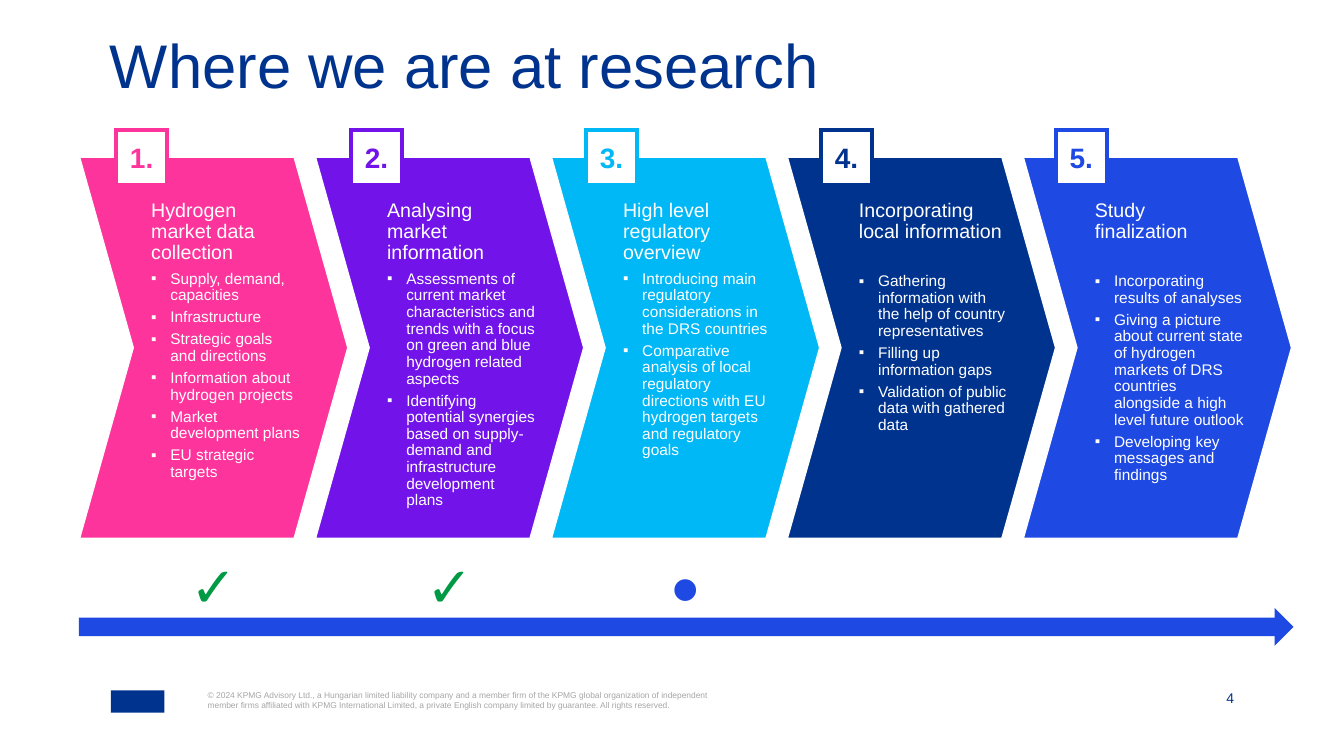
import pptx
import pptx.dml.color
import pptx.enum.shapes
import pptx.enum.text
import pptx.oxml.ns
import pptx.util
from dataclasses import dataclass
from lxml import etree

SHAPE = pptx.enum.shapes.MSO_SHAPE
ALIGN = pptx.enum.text.PP_ALIGN
ANCHOR = pptx.enum.text.MSO_ANCHOR
inches = pptx.util.Inches
qn = pptx.oxml.ns.qn


@dataclass(frozen=True)
class Theme:
    font: str = "Arial"
    navy: str = "00338D"
    blue: str = "1E49E2"
    pink: str = "FD349C"
    purple: str = "7213EA"
    cyan: str = "00B8F5"
    green: str = "009A44"
    gray: str = "A6A6A6"
    white: str = "FFFFFF"
    title: int = 44
    heading: int = 14
    bullet: int = 11
    badge: int = 20
    check: int = 40
    dot: int = 54
    page: int = 10
    legal: int = 6


THEME = Theme()
STEP_LEFT, STEP_PITCH = 0.79, 2.34
BADGE_LEFT, BADGE_PITCH = 1.15, 2.33

# Per step: colour, heading, bullets, status mark
STEPS = [
    (THEME.pink, "Hydrogen market data collection", [
        "Supply, demand, capacities",
        "Infrastructure",
        "Strategic goals and directions",
        "Information about hydrogen projects",
        "Market development plans",
        "EU strategic targets"], "✓"),
    (THEME.purple, "Analysing market information", [
        "Assessments of current market characteristics and trends with a focus "
        "on green and blue hydrogen related aspects",
        "Identifying potential synergies based on supply-demand and "
        "infrastructure development\vplans"], "✓"),
    (THEME.cyan, "High level regulatory overview", [
        "Introducing main regulatory considerations in the DRS countries",
        "Comparative analysis of local regulatory directions with EU hydrogen "
        "targets and regulatory goals"], "•"),
    (THEME.navy, "Incorporating local information\v", [
        "Gathering information with the help of country representatives",
        "Filling up information gaps",
        "Validation of public data with gathered data"], None),
    (THEME.blue, "Study\vfinalization\v", [
        "Incorporating results of analyses",
        "Giving a picture about current state of hydrogen markets of DRS "
        "countries alongside a high level future outlook",
        "Developing key messages and findings"], None),
]
MARKS = {"✓": (THEME.check, THEME.green), "•": (THEME.dot, THEME.blue)}
LEGAL = ("© 2024 KPMG Advisory Ltd., a Hungarian limited liability company and a member "
         "firm of the KPMG global organization of independent member firms affiliated with "
         "KPMG International Limited, a private English company limited by guarantee. "
         "All rights reserved.")


def rgb(value):
    return pptx.dml.color.RGBColor.from_string(value)


def paint(shape, fill, line=None, width=1):
    shape.shadow.inherit = False
    shape.fill.solid()
    shape.fill.fore_color.rgb = rgb(fill)
    if line:
        shape.line.color.rgb = rgb(line)
        shape.line.width = pptx.util.Pt(width)
        # Sharp corners
        etree.SubElement(shape.line._get_or_add_ln(), qn("a:miter"), lim="800000")
    else:
        shape.line.fill.background()


def set_frame(shape, insets=(0, 0, 0, 0), anchor=ANCHOR.TOP):
    frame = shape.text_frame
    values = dict(zip(("margin_left", "margin_top", "margin_right", "margin_bottom"),
                      map(inches, insets)))
    values.update(word_wrap=True, vertical_anchor=anchor,
                  auto_size=pptx.enum.text.MSO_AUTO_SIZE.NONE)
    for name, value in values.items():
        setattr(frame, name, value)
    return frame


def write(paragraph, text, size, color, bold=False, **layout):
    paragraph.text = text
    layout.setdefault("alignment", ALIGN.LEFT)
    for name, value in layout.items():
        setattr(paragraph, name, value)
    for run in paragraph.runs:
        values = dict(name=THEME.font, size=pptx.util.Pt(size), bold=bold)
        for name, value in values.items():
            setattr(run.font, name, value)
        run.font.color.rgb = rgb(color)
    # Line breaks keep the type size of their paragraph
    for line_break in paragraph._p.findall(qn("a:br")):
        etree.SubElement(line_break, qn("a:rPr"), sz=str(size * 100))


def add_bullet(paragraph):
    properties = paragraph._p.get_or_add_pPr()
    properties.set("marL", str(inches(0.19)))
    properties.set("indent", str(inches(-0.19)))
    etree.SubElement(properties, qn("a:buFont"), typeface=THEME.font)
    etree.SubElement(properties, qn("a:buChar"), char="▪")


def add_label(slide, box, text, size, color, insets=(0, 0, 0, 0), anchor=ANCHOR.TOP, **style):
    shape = slide.shapes.add_textbox(*map(inches, box))
    write(set_frame(shape, insets, anchor).paragraphs[0], text, size, color, **style)


def add_title(slide, box, text):
    title = slide.shapes.title
    title.left, title.top, title.width, title.height = map(inches, box)
    write(set_frame(title).paragraphs[0], text, THEME.title, THEME.navy, line_spacing=0.7)


def add_step(slide, box, color, heading, bullets):
    left, top, width, height = box
    # Notched arrow outline, in shares of the box
    outline = [(inches(left + width * x), inches(top + height * y)) for x, y in
               ((0, 0), (0.8, 0), (1, 0.5), (0.8, 1), (0, 1), (0.2, 0.5))]
    builder = slide.shapes.build_freeform(*outline[0])
    builder.add_line_segments(outline[1:], close=True)
    shape = builder.convert_to_shape()
    paint(shape, color, THEME.white)
    # Heading and list
    frame = set_frame(shape, (0.71, 0.43, 0.47, 0.04))
    write(frame.paragraphs[0], heading, THEME.heading, THEME.white,
          line_spacing=0.9, space_after=pptx.util.Pt(0.35 * THEME.heading))
    for bullet in bullets:
        paragraph = frame.add_paragraph()
        write(paragraph, bullet, THEME.bullet, THEME.white,
              line_spacing=0.9, space_after=pptx.util.Pt(0.35 * THEME.bullet))
        add_bullet(paragraph)


def add_badge(slide, box, number, color):
    badge = slide.shapes.add_shape(SHAPE.RECTANGLE, *map(inches, box))
    paint(badge, THEME.white, color, 3)
    frame = set_frame(badge, [0.06] * 4, ANCHOR.MIDDLE)
    write(frame.paragraphs[0], f"{number}.", THEME.badge, color, True, alignment=ALIGN.CENTER)


def add_timeline(slide, box):
    left, top, width, height = box
    # Status marks above the arrow
    for index, (*_, mark) in enumerate(STEPS):
        if mark:
            size, color = MARKS[mark]
            mark_box = (left + 0.92 + index * STEP_PITCH, top, 0.83, 0.83)
            add_label(slide, mark_box, mark, size, color, [0.06] * 4, ANCHOR.MIDDLE,
                      bold=True, alignment=ALIGN.CENTER)
    arrow_height = 0.34
    arrow = slide.shapes.add_shape(SHAPE.RIGHT_ARROW, *map(
        inches, (left, top + height - arrow_height, width, arrow_height)))
    paint(arrow, THEME.blue, THEME.blue)


def add_footer(slide, box):
    left, top, width, height = box
    emblem = slide.shapes.add_shape(SHAPE.RECTANGLE, *map(inches, (left, top, 0.53, height)))
    paint(emblem, THEME.navy)
    add_label(slide, (left + 0.96, top, 5.06, 0.2), LEGAL, THEME.legal, THEME.gray)
    add_label(slide, (left + width - 0.27, top, 0.27, 0.16), "4", THEME.page, THEME.navy,
              anchor=ANCHOR.BOTTOM, alignment=ALIGN.RIGHT)


def main():
    presentation = pptx.Presentation()
    presentation.slide_width, presentation.slide_height = inches(13.33), inches(7.5)
    slide = presentation.slides.add_slide(presentation.slide_layouts[5])
    add_title(slide, (1.09, 0.47, 11.16, 1.13), "Where we are at research")
    for index, (color, heading, bullets, _) in enumerate(STEPS):
        add_step(slide, (STEP_LEFT + index * STEP_PITCH, 1.56, 2.66, 3.78),
                 color, heading, bullets)
        add_badge(slide, (BADGE_LEFT + index * BADGE_PITCH, 1.29, 0.51, 0.55),
                  index + 1, color)
    add_timeline(slide, (STEP_LEFT, 5.39, 12.03, 1))
    add_footer(slide, (1.1, 6.85, 11.14, 0.22))
    presentation.save("out.pptx")


if __name__ == "__main__":
    main()
